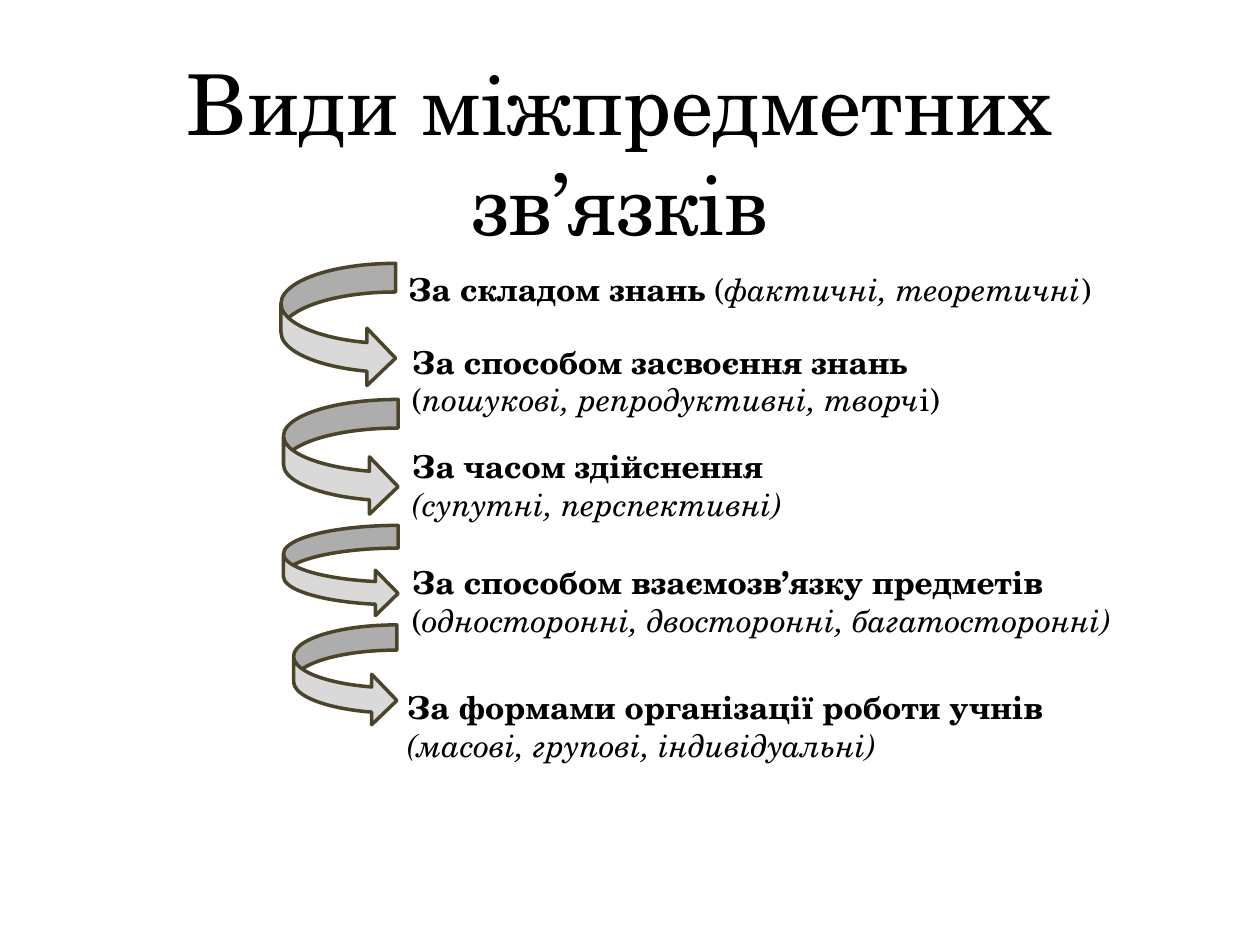
from pptx import Presentation
from pptx.dml.color import RGBColor
from pptx.enum.shapes import MSO_SHAPE
from pptx.enum.text import MSO_ANCHOR, PP_ALIGN
from pptx.util import Inches, Pt

COLS, ROWS = 100, 75
FACE = "TeX Gyre Schola"
INK, FILL, EDGE = "000000", "D9D9D9", "4A452A"

TITLE = (4.2, 5.8, 90, 12.5)
ARROWS = [
    (22.3, 20.9, 9.1, 9.8),
    (22.5, 31.7, 9.1, 9.2),
    (22.5, 41.7, 9.1, 7.2),
    (23.3, 49.6, 8.2, 8),
]
ITEMS = [
    ((31.4, 20.9, 64.9, 4), [
        [("За складом знань ", "b"), ("(", ""),
         ("фактичні, теоретичні", "i"), (")", "")]]),
    ((31.7, 26.7, 59.1, 7.1), [
        [("За способом засвоєння знань", "b")],
        [("(", ""), ("пошукові, репродуктивні, творч", "i"), ("і)", "")]]),
    ((31.7, 35, 51.5, 7.1), [
        [("За часом здійснення", "b")],
        [("(супутні, перспективні)", "i")]]),
    ((31.7, 44.2, 62.4, 7.1), [
        [("За способом взаємозв’язку предметів ", "b"), ("(", ""),
         ("односторонні, двосторонні, багатосторонні)", "i")]]),
    ((31.3, 54.1, 59.1, 7.1), [
        [("За формами організації роботи учнів ", "b"),
         ("(масові, групові, індивідуальні)", "i")]]),
]


def color(code):
    return RGBColor.from_string(code)


def place(deck, box):
    col, row = deck.slide_width / COLS, deck.slide_height / ROWS
    return [round(n * unit) for n, unit in zip(box, (col, row) * 2)]


def add_text(deck, slide, box, lines, size):
    frame = slide.shapes.add_textbox(*place(deck, box)).text_frame
    frame.word_wrap = True
    for at, runs in enumerate(lines):
        para = frame.add_paragraph() if at else frame.paragraphs[0]
        para.font.name = FACE
        para.font.size = Pt(size)
        para.font.color.rgb = color(INK)
        for text, style in runs:
            run = para.add_run()
            run.text = text
            run.font.bold = style == "b"
            run.font.italic = style == "i"
    return frame


def add_title(deck, slide, box):
    lines = [[("Види міжпредметних зв’язків", "")]]
    frame = add_text(deck, slide, box, lines, 48)
    frame.vertical_anchor = MSO_ANCHOR.MIDDLE
    frame.paragraphs[0].alignment = PP_ALIGN.CENTER


def add_arrow(deck, slide, box):
    arrow = slide.shapes.add_shape(
        MSO_SHAPE.CURVED_RIGHT_ARROW, *place(deck, box))
    arrow.shadow.inherit = False
    arrow.fill.solid()
    arrow.fill.fore_color.rgb = color(FILL)
    arrow.line.color.rgb = color(EDGE)
    arrow.line.width = Pt(2)


def main():
    deck = Presentation()
    deck.slide_width, deck.slide_height = Inches(10), Inches(7.5)
    slide = deck.slides.add_slide(deck.slide_layouts[6])
    add_title(deck, slide, TITLE)
    for box in ARROWS:
        add_arrow(deck, slide, box)
    for box, lines in ITEMS:
        add_text(deck, slide, box, lines, 18)
    deck.save("out.pptx")


if __name__ == "__main__":
    main()
